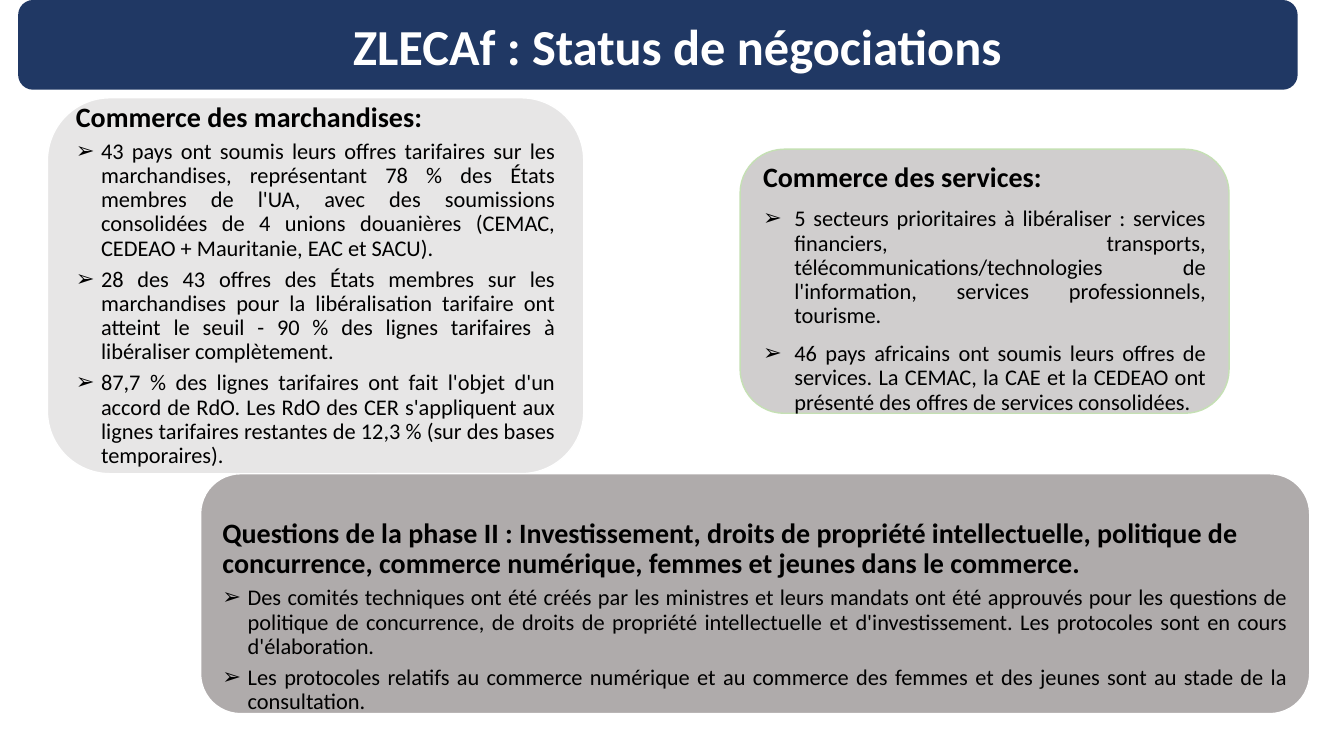
from dataclasses import dataclass

from lxml.etree import SubElement
from pptx import Presentation
from pptx.dml.color import RGBColor
from pptx.enum.shapes import MSO_SHAPE as Preset
from pptx.enum.text import MSO_ANCHOR as Anchor
from pptx.enum.text import MSO_AUTO_SIZE as AutoSize
from pptx.enum.text import PP_ALIGN as Align
from pptx.oxml.ns import qn
from pptx.util import Inches, Pt

NAVY = RGBColor(0x20, 0x38, 0x64)
WHITE = RGBColor(0xFF, 0xFF, 0xFF)
BLACK = RGBColor(0x00, 0x00, 0x00)
PALE_GRAY = RGBColor(0xE7, 0xE6, 0xE6)
LIGHT_GRAY = RGBColor(0xD0, 0xCE, 0xCE)
MID_GRAY = RGBColor(0xAF, 0xAB, 0xAB)
PALE_GREEN = RGBColor(0xC5, 0xE0, 0xB4)

FONT = "Calibri"
CORNER = 0.1667
CORNER_INSET = CORNER * 0.293
SIDE_MARGIN = 0.1
COMPARISON_LAYOUT = 4


@dataclass(frozen=True)
class Panel:
    left: float
    top: float
    width: float
    height: float
    text_top: float
    fill: RGBColor
    line: RGBColor
    heading: str
    bullets: tuple[str, ...]
    indent: float = 0.25
    bullet_gap: float = 5


PANELS = (
    Panel(
        0.47, 0.97, 5.32, 3.73, 1.02, PALE_GRAY, WHITE,
        "Commerce des marchandises:",
        (
            "43 pays ont soumis leurs offres tarifaires sur les marchandises, "
            "représentant 78 % des États membres de l'UA, avec des soumissions "
            "consolidées de 4 unions douanières (CEMAC, CEDEAO + Mauritanie, EAC et SACU).",
            "28 des 43 offres des États membres sur les marchandises pour la "
            "libéralisation tarifaire ont atteint le seuil - 90 % des lignes "
            "tarifaires à libéraliser complètement.",
            "87,7 % des lignes tarifaires ont fait l'objet d'un accord de RdO. "
            "Les RdO des CER s'appliquent aux lignes tarifaires restantes de "
            "12,3 % (sur des bases temporaires).",
        ),
    ),
    Panel(
        1.99, 4.7, 11, 2.38, 5.15, MID_GRAY, WHITE,
        "Questions de la phase II : Investissement, droits de propriété "
        "intellectuelle, politique de concurrence, commerce numérique, femmes "
        "et jeunes dans le commerce.",
        (
            "Des comités techniques ont été créés par les ministres et leurs "
            "mandats ont été approuvés pour les questions de politique de "
            "concurrence, de droits de propriété intellectuelle et "
            "d'investissement. Les protocoles sont en cours d'élaboration.",
            "Les protocoles relatifs au commerce numérique et au commerce des "
            "femmes et des jeunes sont au stade de la consultation.",
        ),
    ),
    Panel(
        7.34, 1.48, 4.85, 2.62, 1.62, LIGHT_GRAY, PALE_GREEN,
        "Commerce des services:",
        (
            "5 secteurs prioritaires à libéraliser : services financiers, "
            "transports, télécommunications/technologies de l'information, "
            "services professionnels, tourisme.",
            "46 pays africains ont soumis leurs offres de services. La CEMAC, "
            "la CAE et la CEDEAO ont présenté des offres de services consolidées.",
        ),
        indent=0.31,
        bullet_gap=10,
    ),
)


def place(shape, left: float, top: float, width: float, height: float) -> None:
    shape.left, shape.top = Inches(left), Inches(top)
    shape.width, shape.height = Inches(width), Inches(height)


def add_backdrop(page, holder, left: float, top: float, width: float, height: float,
                 *, fill: RGBColor, line: RGBColor | None = None) -> None:
    backdrop = page.shapes.add_shape(
        Preset.ROUNDED_RECTANGLE, Inches(left), Inches(top), Inches(width), Inches(height))
    backdrop.adjustments[0] = CORNER
    backdrop.shadow.inherit = False
    backdrop.fill.solid()
    backdrop.fill.fore_color.rgb = fill
    if line is None:
        backdrop.line.fill.background()
    else:
        backdrop.line.color.rgb = line
        backdrop.line.width = Pt(1)
    holder.element.addprevious(backdrop.element)


def prepare_frame(holder, *, anchor: Anchor, left: float = SIDE_MARGIN):
    frame = holder.text_frame
    frame.word_wrap = True
    frame.auto_size = AutoSize.NONE
    frame.vertical_anchor = anchor
    frame.margin_left, frame.margin_right = Inches(left), Inches(SIDE_MARGIN)
    frame.margin_top = frame.margin_bottom = 0
    return frame


def write(para, text: str, *, size: float, color: RGBColor = BLACK, bold: bool = False,
          align: Align = Align.LEFT, before: float = 0, spacing: float = 0.9,
          bullet: str | None = None, indent: float = 0) -> None:
    properties = para._p.get_or_add_pPr()
    properties.set("marL", str(Inches(indent)))
    properties.set("indent", str(-Inches(indent)))
    if bullet:
        SubElement(properties, qn("a:buFont"), typeface=FONT)
        SubElement(properties, qn("a:buChar"), char=bullet)
    else:
        SubElement(properties, qn("a:buNone"))
    para.alignment = align
    para.line_spacing = spacing
    para.space_before = Pt(before)
    para.space_after = Pt(0)
    span = para.add_run()
    span.text = text
    span.font.name = FONT
    span.font.size = Pt(size)
    span.font.bold = bold
    span.font.color.rgb = color


def add_title(page, text: str) -> None:
    bar = (0.18, 0, 12.69, 0.89)
    holder = page.shapes.title
    place(holder, *bar)
    add_backdrop(page, holder, *bar, fill=NAVY)
    frame = prepare_frame(holder, anchor=Anchor.MIDDLE, left=0.49)
    write(frame.paragraphs[0], text, size=36, color=WHITE, bold=True,
          align=Align.CENTER, spacing=1.0)


def add_panel(page, holder, panel: Panel) -> None:
    inset = panel.height * CORNER_INSET
    place(holder, panel.left + inset, panel.text_top, panel.width - 2 * inset,
          panel.top + panel.height - panel.text_top)
    add_backdrop(page, holder, panel.left, panel.top, panel.width, panel.height,
                 fill=panel.fill, line=panel.line)
    frame = prepare_frame(holder, anchor=Anchor.TOP)
    write(frame.paragraphs[0], panel.heading, size=20, bold=True)
    for bullet_text in panel.bullets:
        write(frame.add_paragraph(), bullet_text, size=16, align=Align.JUSTIFY,
              before=panel.bullet_gap, bullet="➢", indent=panel.indent)


def main() -> None:
    deck = Presentation()
    deck.slide_width, deck.slide_height = Inches(13.33), Inches(7.5)
    page = deck.slides.add_slide(deck.slide_layouts[COMPARISON_LAYOUT])
    add_title(page, "ZLECAf : Status de négociations")
    *bodies, spare = list(page.placeholders)[1:]
    spare.element.getparent().remove(spare.element)
    for holder, panel in zip(bodies, PANELS):
        add_panel(page, holder, panel)
    deck.save("out.pptx")


if __name__ == "__main__":
    main()
